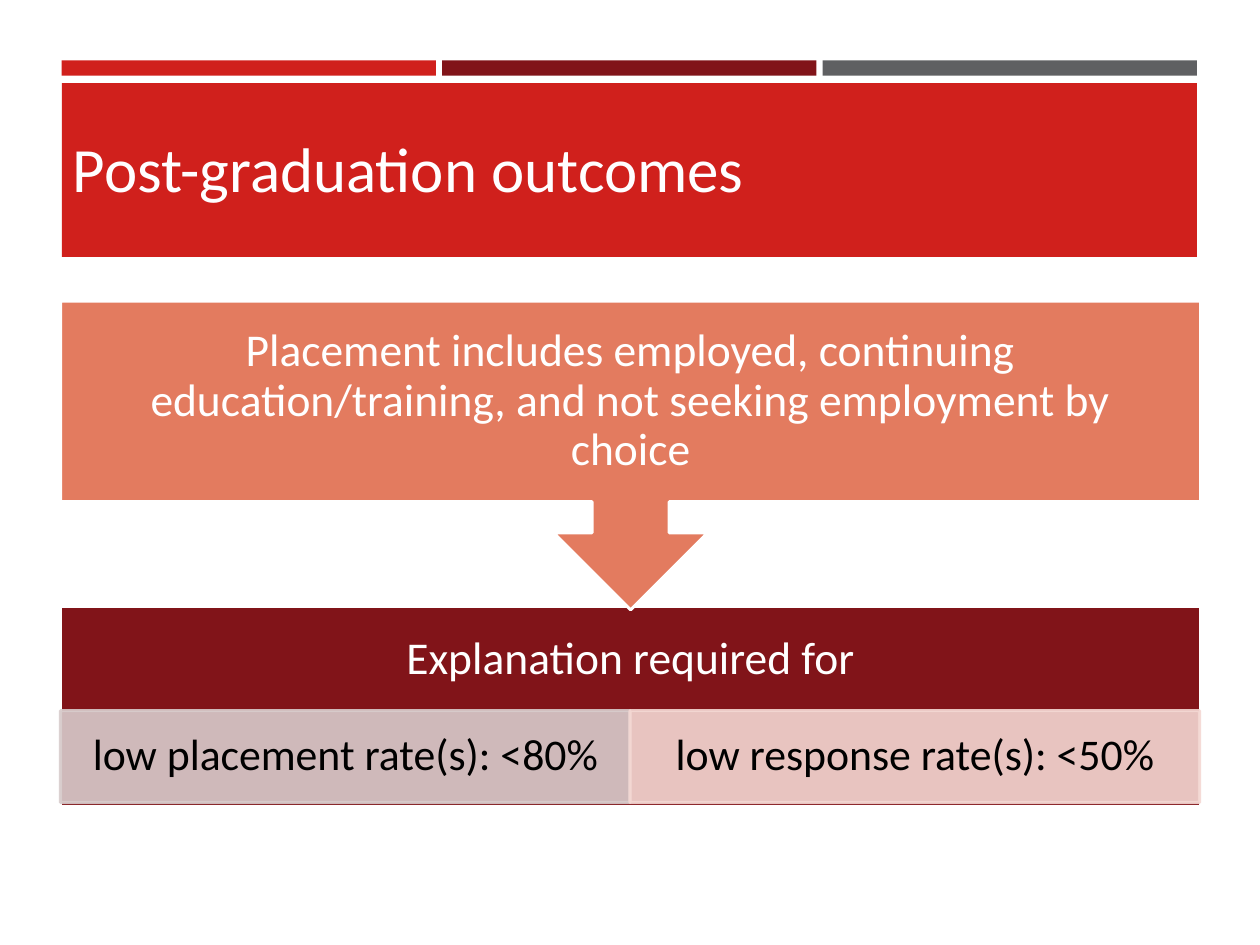
from dataclasses import dataclass
from typing import Optional

from lxml import etree
from pptx import Presentation
from pptx.dml.color import RGBColor
from pptx.enum import shapes, text
from pptx.oxml.ns import qn
from pptx.util import Inches, Pt

COLORS = {
    "red": "D0201C",
    "maroon": "811419",
    "gray": "5F6062",
    "coral": "E37B5F",
    "mauve": "D8CCCC",
    "pink": "F4D8D3",
    "white": "FFFFFF",
    "title": "FFFEFF",
    "black": "000000",
}
LEFT, WIDTH = 0.48, 9.05
BAR_LEFT, BAR_WIDTH, BAR_STEP = 0.49, 2.97, 3.02


@dataclass
class Panel:
    left: float
    top: float
    width: float
    height: float
    fill: str
    line: Optional[str] = None
    alpha: Optional[int] = None
    kind: shapes.MSO_SHAPE = shapes.MSO_SHAPE.RECTANGLE
    rotation: int = 0


@dataclass
class Label:
    words: str
    size: int
    color: str
    side: float = 0.2
    edge: float = 0.2
    align: text.PP_ALIGN = text.PP_ALIGN.CENTER
    spacing: float = 0.9


def rgb(name: str) -> RGBColor:
    return RGBColor.from_string(COLORS[name])


def draw_panel(page, panel: Panel):
    shape = page.shapes.add_shape(
        panel.kind, Inches(panel.left), Inches(panel.top),
        Inches(panel.width), Inches(panel.height))
    shape.shadow.inherit = False
    shape.rotation = panel.rotation
    shape.fill.solid()
    shape.fill.fore_color.rgb = rgb(panel.fill)
    if panel.line:
        shape.line.color.rgb = rgb(panel.line)
        shape.line.width = Pt(1.75)
    else:
        shape.line.fill.background()
    if panel.alpha:
        for color in shape._element.spPr.iter(qn("a:srgbClr")):
            etree.SubElement(color, qn("a:alpha"), val=str(panel.alpha * 1000))
    return shape


def write_label(box, label: Label) -> None:
    frame = box.text_frame
    frame.text = label.words
    frame.word_wrap = True
    frame.vertical_anchor = text.MSO_ANCHOR.MIDDLE
    frame.margin_left = frame.margin_right = Inches(label.side)
    frame.margin_top = frame.margin_bottom = Inches(label.edge)
    para = frame.paragraphs[0]
    para.alignment = label.align
    para.line_spacing = label.spacing
    span = para.runs[0]
    span.font.name = "Calibri"
    span.font.size = Pt(label.size)
    span.font.color.rgb = rgb(label.color)


def add_label(page, top: float, height: float, label: Label) -> None:
    box = page.shapes.add_textbox(
        Inches(LEFT), Inches(top), Inches(WIDTH), Inches(height))
    write_label(box, label)


def main() -> None:
    deck = Presentation()
    deck.slide_width, deck.slide_height = Inches(10), Inches(7.5)
    page = deck.slides.add_slide(deck.slide_layouts[6])

    for index, color in enumerate(("red", "maroon", "gray")):
        draw_panel(page, Panel(BAR_LEFT + index * BAR_STEP, 0.48, BAR_WIDTH, 0.12, color))
    draw_panel(page, Panel(BAR_LEFT, 0.66, 9.01, 1.38, "red"))
    add_label(page, 0.77, 1.11, Label(
        "Post-graduation outcomes", 36, "title", 0.1, 0.05, text.PP_ALIGN.LEFT, 1.0))

    draw_panel(page, Panel(LEFT, 4.81, WIDTH, 1.59, "maroon", "white"))
    add_label(page, 4.81, 0.86, Label("Explanation required for", 26, "white"))

    cells = (("low placement rate(s): <80%", "mauve"),
             ("low response rate(s): <50%", "pink"))
    for index, (words, color) in enumerate(cells):
        cell = draw_panel(page, Panel(
            LEFT + index * 4.52, 5.64, 4.52, 0.73, color, color, 90))
        write_label(cell, Label(words, 25, "black", 0.19, 0.03))

    draw_panel(page, Panel(LEFT, 2.39, WIDTH, 2.45, "coral", "white",
                           kind=shapes.MSO_SHAPE.UP_ARROW_CALLOUT, rotation=180))
    add_label(page, 2.39, 1.59, Label(
        "Placement includes employed, continuing education/training, "
        "and not seeking employment by choice", 26, "white"))

    deck.save("out.pptx")


if __name__ == "__main__":
    main()
